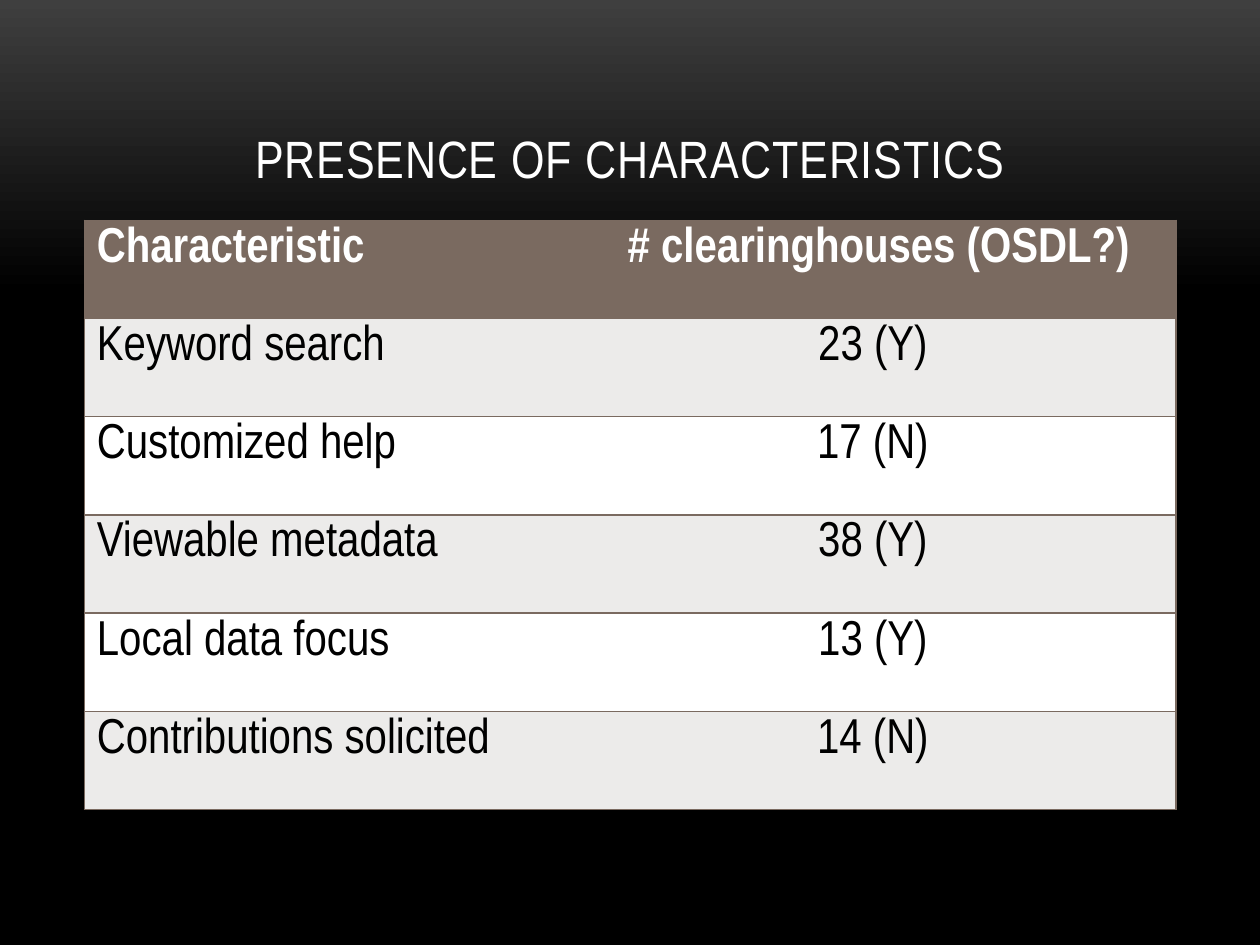
from lxml import etree
from pptx import Presentation
from pptx.dml.color import RGBColor
from pptx.enum.text import MSO_ANCHOR, PP_ALIGN
from pptx.oxml.ns import qn
from pptx.util import Cm, Pt

LEFT, CENTER = PP_ALIGN.LEFT, PP_ALIGN.CENTER
BOTTOM = MSO_ANCHOR.BOTTOM
BLACK, WHITE, BROWN, PALE = "000000", "FFFFFF", "7A6A60", "ECEBEA"
ROWS = [
    ("Characteristic", " # clearinghouses (OSDL?)"),
    ("Keyword search", "23 (Y)"),
    ("Customized help", "17 (N)"),
    ("Viewable metadata", "38 (Y)"),
    ("Local data focus", "13 (Y)"),
    ("Contributions solicited", "14 (N)"),
]


def color(code):
    return RGBColor.from_string(code)


class Deck:
    """Hold the style and the current slide."""

    font = "Arial Narrow"
    left, width = Cm(1.7), Cm(22.01)

    def __init__(self):
        self.prs = Presentation()
        self.prs.slide_width, self.prs.slide_height = Cm(25.4), Cm(19.05)
        self.slide = self.prs.slides.add_slide(self.prs.slide_layouts[5])

    def backdrop(self, stops):
        fill = self.slide.background.fill
        fill.gradient()
        fill.gradient_angle = 270
        for stop, (place, code) in zip(fill.gradient_stops, stops):
            stop.position = place
            stop.color.rgb = color(code)

    def label(self, frame, text, size, code, align, bold=False):
        frame.text = text
        para = frame.paragraphs[0]
        para.alignment = align
        font = para.font
        font.name, font.size, font.bold = self.font, Pt(size), bold
        font.color.rgb = color(code)
        return para

    def title(self, text):
        shape = self.slide.shapes.title
        shape.left, shape.top = self.left, Cm(0.76)
        shape.width, shape.height = self.width, Cm(3.18)
        frame = shape.text_frame
        frame.vertical_anchor = BOTTOM
        para = self.label(frame, text, 30, WHITE, CENTER)
        para.runs[0]._r.get_or_add_rPr().set("spc", "50")

    def border(self, cell, sides):
        props = cell._tc.get_or_add_tcPr()
        for side in "LRTB":
            line = etree.SubElement(props, qn(f"a:ln{side}"), w=str(Pt(1)))
            if side in sides:
                fill = etree.SubElement(line, qn("a:solidFill"))
                etree.SubElement(fill, qn("a:srgbClr"), val=BROWN)
            else:
                etree.SubElement(line, qn("a:noFill"))

    def table(self, rows, widths, top, height):
        grid = self.slide.shapes.add_table(
            len(rows), len(widths), self.left, top, self.width, height * len(rows)
        ).table
        for col, width in zip(grid.columns, widths):
            col.width = width
        for r, row in enumerate(rows):
            grid.rows[r].height = height
            head = r == 0
            shade = BROWN if head else PALE if r % 2 else WHITE
            for c, text in enumerate(row):
                cell = grid.cell(r, c)
                self.border(cell, "RTB" if c else "LTB")
                cell.fill.solid()
                cell.fill.fore_color.rgb = color(shade)
                self.label(cell.text_frame, text, 28, WHITE if head else BLACK,
                           CENTER if c else LEFT, head)


def main():
    deck = Deck()
    deck.backdrop([(0, "3F3F3F"), (0.31, BLACK)])
    deck.title("PRESENCE OF CHARACTERISTICS")
    deck.table(ROWS, [Cm(9.78), Cm(12.23)], Cm(4.44), Cm(1.98))
    deck.prs.save("out.pptx")


if __name__ == "__main__":
    main()
